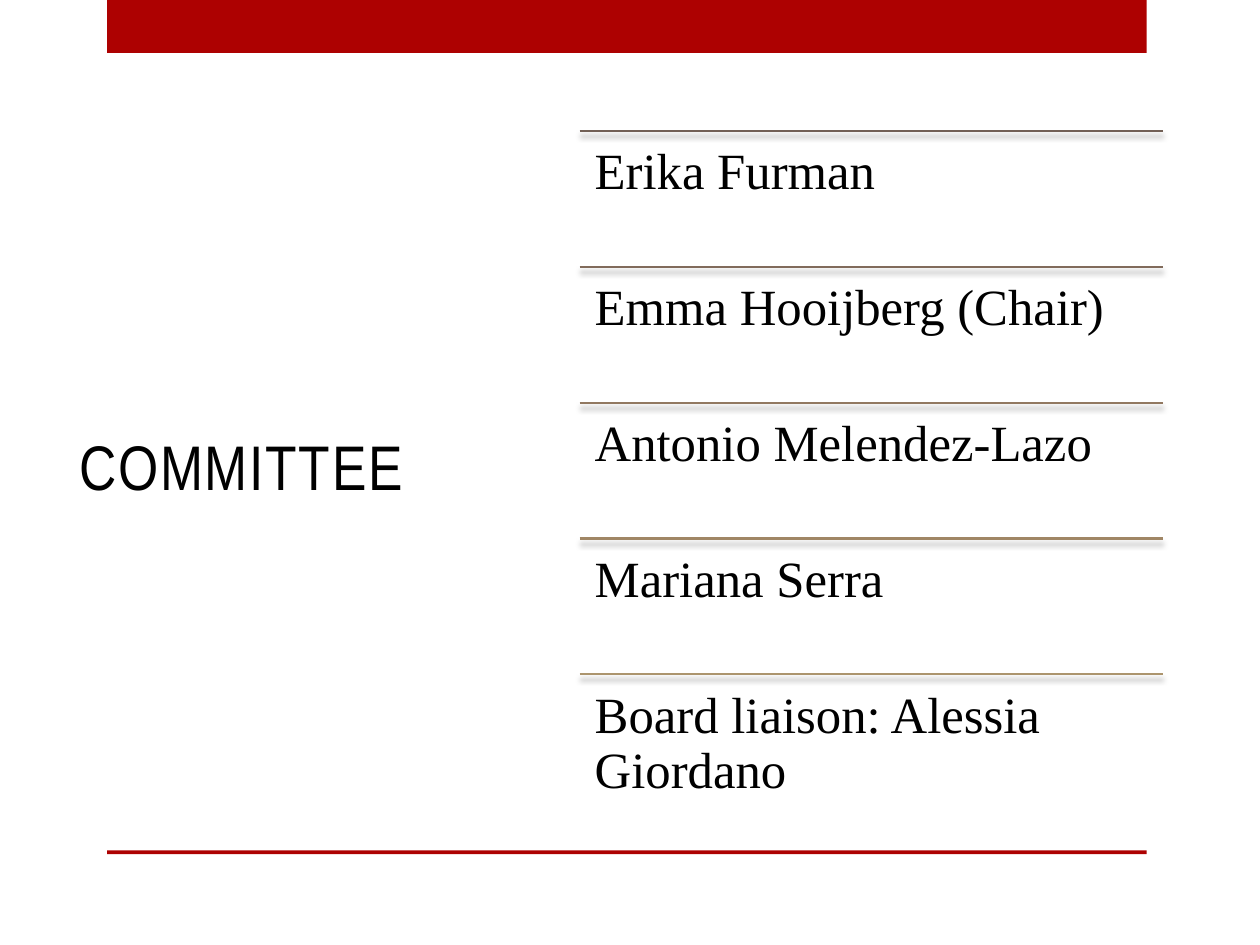
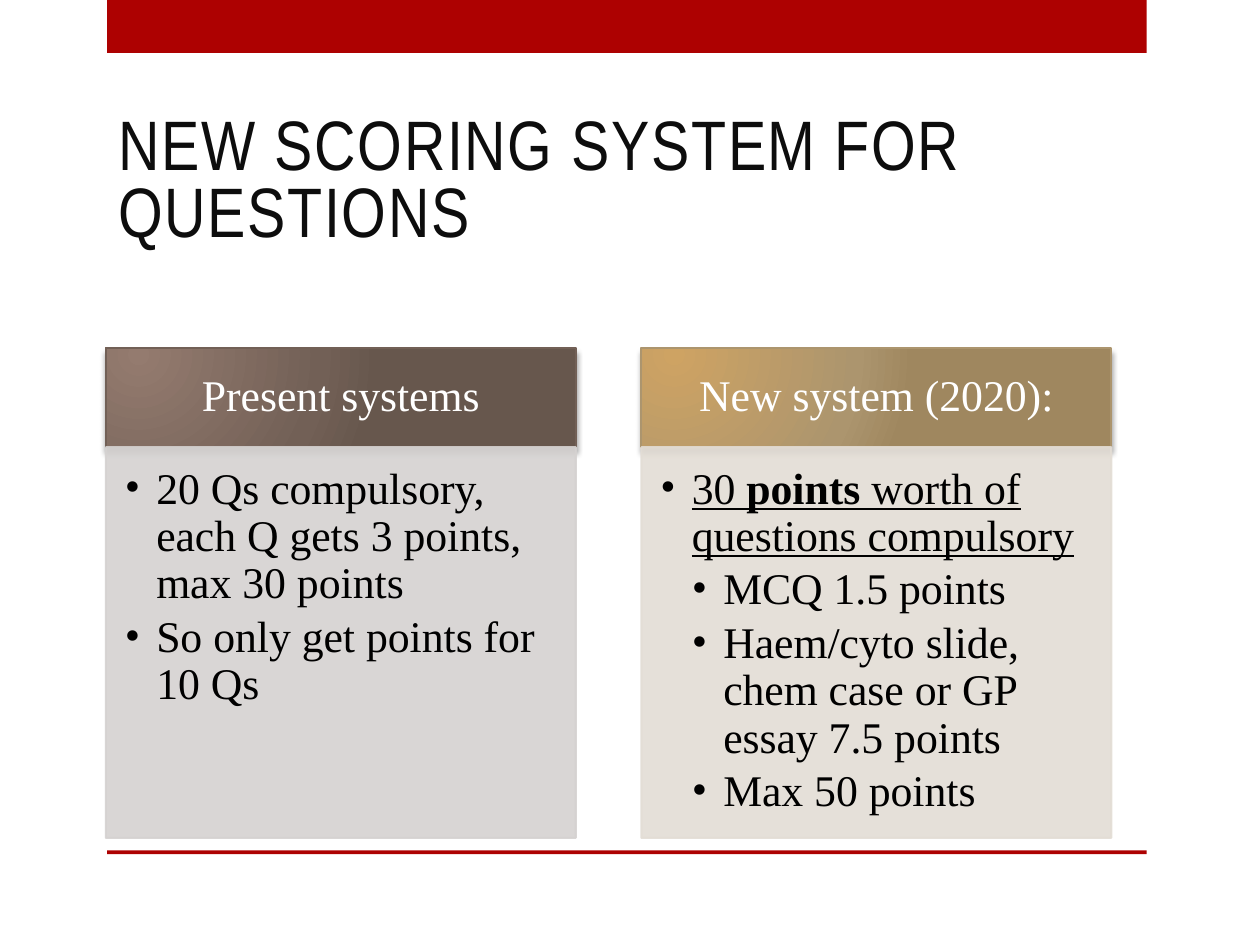
from pptx import Presentation
from pptx import util as u
from pptx.dml.color import RGBColor
from pptx.enum import shapes, text
from pptx.oxml import parse_xml
from pptx.oxml.ns import nsdecls, qn

SHADOW = (
    f'<a:effectLst {nsdecls("a")}><a:outerShdw blurRad="38100" dist="38100" dir="5400000" '
    'rotWithShape="0"><a:srgbClr val="000000"><a:alpha val="35000"/></a:srgbClr>'
    '</a:outerShdw></a:effectLst>'
)
TITLE_ONLY, COMPARISON = 5, 4


def rgb(color):
    return RGBColor.from_string(color)


def place(shape, box):
    sides = ("left", "top", "width", "height")
    for side, length in zip(sides, box):
        setattr(shape, side, u.Inches(length))


def make_translucent(shape, percent):
    for color in shape._element.spPr.iter(qn("a:srgbClr")):
        color.append(parse_xml(f'<a:alpha {nsdecls("a")} val="{percent * 1000}"/>'))


class Deck:
    ACCENT = "AD0101"
    BODY_FONT = "Times New Roman"
    TITLE_FONT = "Arial Narrow"

    def __init__(self):
        self.prs = Presentation()
        self.prs.slide_width, self.prs.slide_height = u.Inches(10), u.Inches(7.5)
        self.slide = None

    def add_slide(self, layout, title, box, size, color):
        self.slide = self.prs.slides.add_slide(self.prs.slide_layouts[layout])
        self.band(0, 0.42)
        self.band(6.75, 0.03)
        heading = self.slide.shapes.title
        place(heading, box)
        self.frame(heading, (0.1, 0.05, 0.1, 0.05), text.MSO_ANCHOR.MIDDLE)
        paragraph = heading.text_frame.paragraphs[0]
        self.fill_paragraph(paragraph, [(title, {})], size, color, self.TITLE_FONT,
                            line_spacing=0.8, space_after=u.Pt(6))
        paragraph.runs[0].font._element.set("spc", "100")

    def band(self, top, height):
        bar = self.slide.shapes.add_shape(shapes.MSO_SHAPE.RECTANGLE, 0, 0, 0, 0)
        place(bar, (0.85, top, 8.25, height))
        bar.shadow.inherit = False
        bar.fill.solid()
        bar.fill.fore_color.rgb = rgb(self.ACCENT)
        bar.line.fill.background()

    def frame(self, shape, insets, anchor=text.MSO_ANCHOR.TOP):
        """Set the text insets and the vertical anchor of a shape."""
        sides = ("margin_left", "margin_top", "margin_right", "margin_bottom")
        settings = {side: u.Inches(inset) for side, inset in zip(sides, insets)}
        settings |= {"word_wrap": True, "auto_size": text.MSO_AUTO_SIZE.NONE,
                     "vertical_anchor": anchor}
        for name, value in settings.items():
            setattr(shape.text_frame, name, value)

    def fill_paragraph(self, paragraph, runs, size, color, font=BODY_FONT, **layout):
        """Fill a paragraph with (words, font settings) runs."""
        settings = {"alignment": text.PP_ALIGN.LEFT, "line_spacing": 0.9,
                    "space_before": u.Pt(0), "space_after": u.Pt(0)} | layout
        for name, value in settings.items():
            setattr(paragraph, name, value)
        for words, extras in runs:
            run = paragraph.add_run()
            run.text = words
            style = {"name": font, "size": u.Pt(size), "bold": False} | extras
            for name, value in style.items():
                setattr(run.font, name, value)
            run.font.color.rgb = rgb(color)

    def ruled_name(self, name, top, height, color):
        left, width = 4.6, 4.63
        rule = self.slide.shapes.add_connector(
            shapes.MSO_CONNECTOR.STRAIGHT,
            *map(u.Inches, (left, top, left + width, top)))
        rule.line.color.rgb = rgb(color)
        rule.line.width = u.Pt(1.25)
        rule._element.spPr.append(parse_xml(SHADOW))
        label = self.slide.shapes.add_textbox(
            *map(u.Inches, (left, top, width, height)))
        self.frame(label, (0.12,) * 4)
        self.fill_paragraph(label.text_frame.paragraphs[0], [(name, {})], 29, "000000")

    def column_head(self, index, words, left, glow):
        """Header with a glow of three colours from its upper left corner."""
        head = self.slide.placeholders[index]
        place(head, (left, 2.76, 3.73, 0.79))
        head.fill.gradient()
        stops = "".join(f'<a:gs pos="{position}000"><a:srgbClr val="{color}"/></a:gs>'
                        for position, color in zip((0, 76, 100), glow))
        plain = head._element.spPr.find(qn("a:gradFill"))
        plain.getparent().replace(plain, parse_xml(
            f'<a:gradFill {nsdecls("a")} rotWithShape="1"><a:gsLst>{stops}</a:gsLst>'
            '<a:path path="circle"><a:fillToRect l="15000" t="15000" r="100000" b="100000"/>'
            '</a:path></a:gradFill>'))
        head.line.color.rgb = rgb(glow[1])
        head.line.width = u.Pt(1.25)
        head._element.spPr.append(parse_xml(SHADOW))
        self.frame(head, (0.19, 0.11, 0.19, 0.11), text.MSO_ANCHOR.MIDDLE)
        self.fill_paragraph(head.text_frame.paragraphs[0], [(words, {})], 25, "FFFFFF",
                            alignment=text.PP_ALIGN.CENTER)

    def column_list(self, index, points, left, tint):
        """Tinted panel listing (level, runs) points."""
        panel = self.slide.placeholders[index]
        place(panel, (left, 3.55, 3.73, 3.1))
        panel.fill.solid()
        panel.fill.fore_color.rgb = rgb(tint)
        panel.line.color.rgb = rgb(tint)
        panel.line.width = u.Pt(1.25)
        make_translucent(panel, 90)
        self.frame(panel, (0.15, 0.15, 0.19, 0.22))
        for number, (level, runs) in enumerate(points):
            frame = panel.text_frame
            paragraph = frame.add_paragraph() if number else frame.paragraphs[0]
            self.fill_paragraph(paragraph, runs, 25, "000000",
                                level=level, space_after=u.Pt(3.75))
            properties = paragraph._p.get_or_add_pPr()
            properties.set("marL", str(u.Inches(0.25 * level)))
            properties.set("indent", str(u.Inches(-0.25)))
            properties.append(parse_xml(f'<a:buFont {nsdecls("a")} typeface="Times New Roman"/>'))
            properties.append(parse_xml(f'<a:buChar {nsdecls("a")} char="•"/>'))


def committee(deck):
    deck.add_slide(TITLE_ONLY, "COMMITTEE", (0.53, 0.7, 2.8, 6.09), 36, "000000")
    members = {
        "Erika Furman": "726056",
        "Emma Hooijberg (Chair)": "816B5B",
        "Antonio Melendez-Lazo": "917860",
        "Mariana Serra": "A08665",
        "Board liaison: Alessia Giordano": "AC956E",
    }
    row = 5.39 / len(members)
    for number, (name, color) in enumerate(members.items()):
        deck.ruled_name(name, 1.04 + number * row, row, color)


def scoring(deck):
    deck.add_slide(COMPARISON, "NEW SCORING SYSTEM FOR QUESTIONS",
                   (0.84, 0.64, 7.97, 1.64), 40, "0D0D0D")
    underlined = {"underline": True}
    present = [
        (1, [("20 Qs compulsory, each Q gets 3 points, max 30 points", {})]),
        (1, [("So only get points for 10 Qs", {})]),
    ]
    new = [
        (1, [("30 ", underlined), ("points", underlined | {"bold": True}),
             (" worth of questions compulsory", underlined)]),
        (2, [("MCQ 1.5 points", {})]),
        (2, [("Haem/cyto slide, chem case or GP essay 7.5 points", {})]),
        (2, [("Max 50 points", {})]),
    ]
    columns = [
        ("Present systems", present, ("947B6F", "726056", "67574D"), "D5D2D1"),
        ("New system (2020):", new, ("CEA363", "AC956E", "9F875F"), "E3DDD5"),
    ]
    for number, (head, points, glow, tint) in enumerate(columns):
        left = 0.84 + number * 4.25
        deck.column_head(2 * number + 1, head, left, glow)
        deck.column_list(2 * number + 2, points, left, tint)


def main():
    deck = Deck()
    committee(deck)
    scoring(deck)
    deck.prs.save("out.pptx")


if __name__ == "__main__":
    main()
